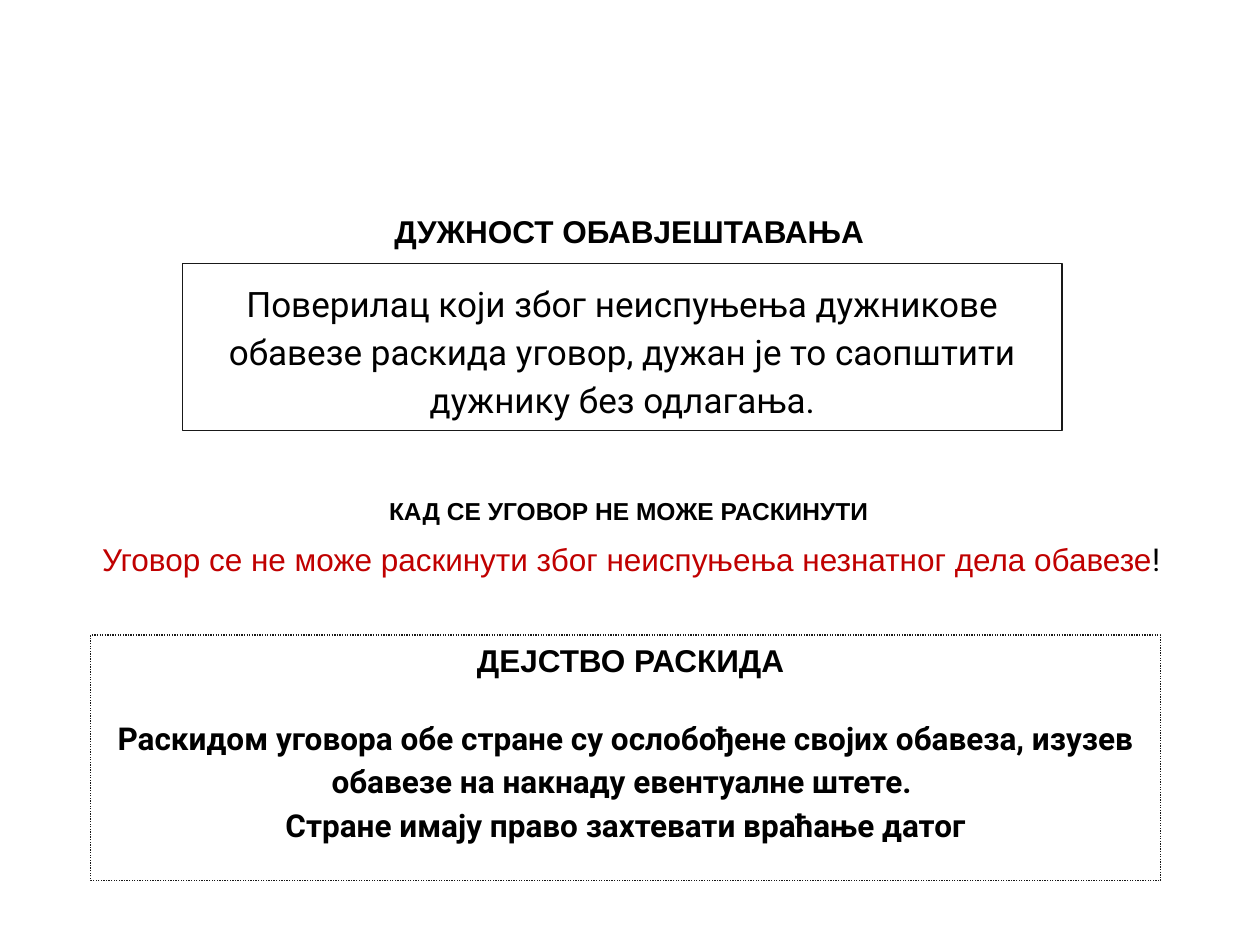
import pptx
import pptx.dml.color
import pptx.enum.dml
import pptx.enum.shapes
import pptx.enum.text
import pptx.util

Inches = pptx.util.Inches
Pt = pptx.util.Pt
BLACK, RED, BORDER = "000000", "C00000", "191919"
INSET = 0.1

# (left, top, width, height), size, text
HEADINGS = [
    ((2.38, 1.25, 5.23, 0.83), 18, "ДУЖНОСТ ОБАВЈЕШТАВАЊА"),
    ((1.55, 3.84, 6.88, 0.43), 14, "КАД СЕ УГОВОР НЕ МОЖЕ РАСКИНУТИ"),
    ((2.39, 4.83, 5.23, 0.66), 18, "ДЕЈСТВО РАСКИДА"),
]
NOTICE = [
    "Поверилац који због неиспуњења дужникове обавезе раскида уговор, "
    "дужан је то саопштити дужнику без одлагања."
]
EFFECTS = [
    "Раскидом уговора обе стране су ослобођене својих обавеза, изузев "
    "обавезе на накнаду евентуалне штете. ",
    "Стране имају право захтевати враћање датог",
]
WARNING = "Уговор се не може раскинути због неиспуњења незнатног дела обавезе"


def color(hex_value):
    return pptx.dml.color.RGBColor.from_string(hex_value)


def style(run, font_name, size, hex_value=BLACK, bold=False):
    run.font.name = font_name
    run.font.size = Pt(size)
    run.font.bold = bold
    run.font.color.rgb = color(hex_value)


def prepare_frame(shape, anchor, top_inset=INSET):
    frame = shape.text_frame
    frame.word_wrap = True
    frame.vertical_anchor = anchor
    frame.margin_left = frame.margin_right = frame.margin_bottom = Inches(INSET)
    frame.margin_top = Inches(top_inset)
    return frame


def center(paragraph, line_spacing=None):
    paragraph.alignment = pptx.enum.text.PP_ALIGN.CENTER
    paragraph.line_spacing = line_spacing


def add_heading(slide, box, size, text):
    shape = slide.shapes.add_textbox(*map(Inches, box))
    frame = prepare_frame(shape, pptx.enum.text.MSO_ANCHOR.BOTTOM)
    frame.text = text
    center(frame.paragraphs[0])
    style(frame.paragraphs[0].runs[0], "Arial", size, bold=True)


def add_framed_text(slide, box, texts, size, bold=False, dash=None, top_inset=INSET):
    shape = slide.shapes.add_shape(
        pptx.enum.shapes.MSO_SHAPE.RECTANGLE, *map(Inches, box))
    shape.shadow.inherit = False
    shape.fill.background()
    shape.line.color.rgb = color(BORDER)
    shape.line.width = Pt(0.75)
    if dash is not None:
        shape.line.dash_style = dash
    frame = prepare_frame(shape, pptx.enum.text.MSO_ANCHOR.TOP, top_inset)
    frame.text = "\n".join(texts)
    for paragraph in frame.paragraphs:
        center(paragraph, 1.15)
        style(paragraph.runs[0], "Roboto", size, bold=bold)


def add_warning(slide, box):
    shape = slide.shapes.add_textbox(*map(Inches, box))
    frame = prepare_frame(shape, pptx.enum.text.MSO_ANCHOR.TOP)
    paragraph = frame.paragraphs[0]
    center(paragraph, 1.15)
    for text, font_name, hex_value in [(WARNING, "Arial", RED), ("!", "Roboto", BLACK)]:
        run = paragraph.add_run()
        run.text = text
        style(run, font_name, 18, hex_value)


def main():
    presentation = pptx.Presentation()
    presentation.slide_width = Inches(10)
    presentation.slide_height = Inches(7.5)
    slide = presentation.slides.add_slide(presentation.slide_layouts[6])

    add_framed_text(slide, (1.45, 2.09, 6.98, 1.33), NOTICE, 20)
    add_warning(slide, (0.21, 4.14, 9.6, 0.68))
    # The top inset leaves room for the heading inside the dotted frame.
    add_framed_text(slide, (0.72, 5.04, 8.49, 1.95), EFFECTS, 18, bold=True,
                    dash=pptx.enum.dml.MSO_LINE.ROUND_DOT, top_inset=0.62)
    for heading in HEADINGS:
        add_heading(slide, *heading)

    presentation.save("out.pptx")


if __name__ == "__main__":
    main()
